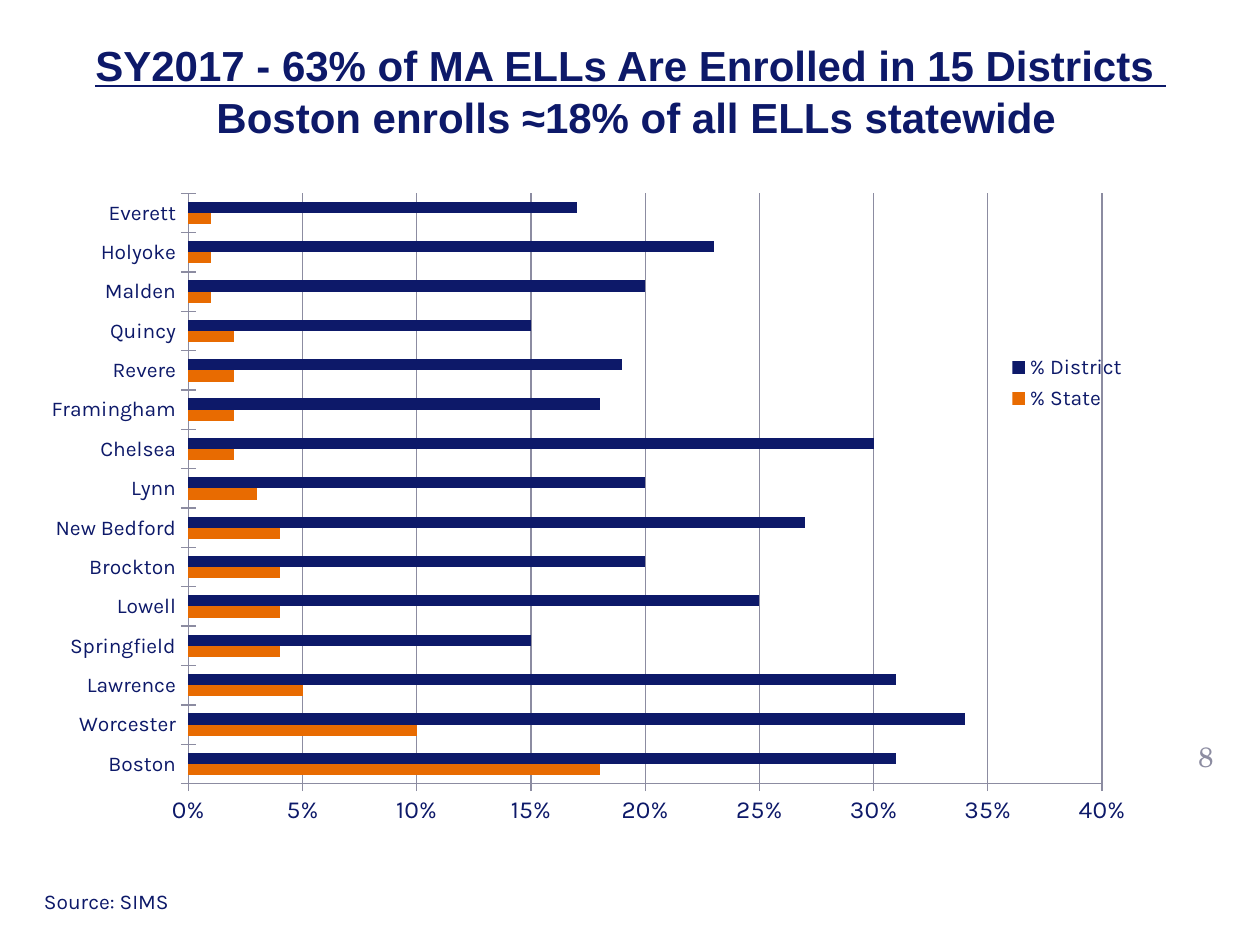
from dataclasses import dataclass

from lxml import etree
from pptx import Presentation
from pptx.chart.data import CategoryChartData
from pptx.dml.color import RGBColor
from pptx.enum.chart import XL_CHART_TYPE, XL_LEGEND_POSITION, XL_TICK_MARK
from pptx.enum.text import MSO_ANCHOR, PP_ALIGN
from pptx.oxml.ns import qn
from pptx.util import Inches, Pt

BAR = XL_CHART_TYPE.BAR_CLUSTERED
RIGHT = XL_LEGEND_POSITION.RIGHT
CROSS, NO_TICK = XL_TICK_MARK.CROSS, XL_TICK_MARK.NONE
TOP, MIDDLE = MSO_ANCHOR.TOP, MSO_ANCHOR.MIDDLE
LEFT, CENTER = PP_ALIGN.LEFT, PP_ALIGN.CENTER


@dataclass(frozen=True)
class Theme:
    navy: RGBColor = RGBColor(0x0D, 0x19, 0x69)
    orange: RGBColor = RGBColor(0xE8, 0x6B, 0x01)
    gray: RGBColor = RGBColor(0x8C, 0x8C, 0xA1)
    heading: str = "Arial"
    body: str = "Karla"
    number: str = "TeX Gyre Schola"
    title_size: Pt = Pt(24)
    number_size: Pt = Pt(16)
    axis_size: Pt = Pt(14)
    small_size: Pt = Pt(12)


THEME = Theme()

# District, % of state ELLs, % of district enrolment
DISTRICTS = [
    ("Boston", 0.18, 0.31),
    ("Worcester", 0.10, 0.34),
    ("Lawrence", 0.05, 0.31),
    ("Springfield", 0.04, 0.15),
    ("Lowell", 0.04, 0.25),
    ("Brockton", 0.04, 0.20),
    ("New Bedford", 0.04, 0.27),
    ("Lynn", 0.03, 0.20),
    ("Chelsea", 0.02, 0.30),
    ("Framingham", 0.02, 0.18),
    ("Revere", 0.02, 0.19),
    ("Quincy", 0.02, 0.15),
    ("Malden", 0.01, 0.20),
    ("Holyoke", 0.01, 0.23),
    ("Everett", 0.01, 0.17),
]


def style_font(font, name, size, color):
    font.name, font.size = name, size
    font.color.rgb = color


def add_text_frame(slide, box, anchor):
    tf = slide.shapes.add_textbox(*box).text_frame
    tf.word_wrap = True
    tf.vertical_anchor = anchor
    return tf


def add_label(slide, box, text, name, size, color, align=LEFT, anchor=TOP):
    p = add_text_frame(slide, box, anchor).paragraphs[0]
    p.alignment = align
    r = p.add_run()
    r.text = text
    style_font(r.font, name, size, color)


def add_title(slide, box):
    p = add_text_frame(slide, box, MIDDLE).paragraphs[0]
    p.alignment = CENTER
    p.line_spacing = 1.05
    lines = [
        ("SY2017 - 63% of MA ELLs Are Enrolled in 15 Districts ", True),
        (" Boston enrolls ≈18% of all ELLs statewide", False),
    ]
    for i, (text, underline) in enumerate(lines):
        if i:
            p.add_line_break()
        r = p.add_run()
        r.text = text
        style_font(r.font, THEME.heading, THEME.title_size, THEME.navy)
        r.font.bold = True
        r.font.underline = underline


def add_layout(parent, after, x, y, w, h, inner=False):
    """Place a chart part by fractions of the chart area."""
    for old in parent.findall(qn("c:layout")):
        parent.remove(old)
    layout = etree.Element(qn("c:layout"))
    manual = etree.SubElement(layout, qn("c:manualLayout"))
    values = [("layoutTarget", "inner")] if inner else []
    values += [("xMode", "edge"), ("yMode", "edge"),
               ("x", x), ("y", y), ("w", w), ("h", h)]
    for tag, value in values:
        etree.SubElement(manual, qn(f"c:{tag}")).set("val", str(value))
    if after is None:
        parent.insert(0, layout)
    else:
        after.addnext(layout)


def style_line(line):
    line.color.rgb = THEME.gray
    line.width = Pt(0.75)


def add_district_chart(slide, box):
    data = CategoryChartData(number_format="0%")
    names, state, district = zip(*DISTRICTS)
    data.categories = names
    data.add_series("% State", state)
    data.add_series("% District", district)
    chart = slide.shapes.add_chart(BAR, *box, data).chart
    chart.has_title = False
    style_font(chart.font, THEME.body, Pt(18), THEME.navy)

    # Bars
    plot = chart.plots[0]
    plot.vary_by_categories = False
    plot.gap_width, plot.overlap = 150, 0
    for series, color in zip(plot.series, (THEME.orange, THEME.navy)):
        series.format.fill.solid()
        series.format.fill.fore_color.rgb = color

    # Axes
    axes = ((chart.category_axis, THEME.small_size),
            (chart.value_axis, THEME.axis_size))
    for axis, size in axes:
        axis.major_tick_mark, axis.minor_tick_mark = CROSS, NO_TICK
        style_font(axis.tick_labels.font, THEME.body, size, THEME.navy)
        style_line(axis.format.line)
    value_axis = chart.value_axis
    value_axis.minimum_scale, value_axis.maximum_scale = 0, 0.4
    value_axis.major_unit = 0.05
    value_axis.tick_labels.number_format = "0%"
    value_axis.tick_labels.number_format_is_linked = False
    value_axis.has_major_gridlines = True
    style_line(value_axis.major_gridlines.format.line)

    # Legend over the plot
    chart.has_legend = True
    legend = chart.legend
    legend.position, legend.include_in_layout = RIGHT, False
    style_font(legend.font, THEME.body, THEME.small_size, THEME.navy)
    root = chart.element
    legend_pos = root.find(".//" + qn("c:legendPos"))
    add_layout(legend_pos.getparent(), legend_pos, 0.82, 0.24, 0.12, 0.09)
    add_layout(root.find(".//" + qn("c:plotArea")), None,
               0.126, 0.034, 0.784, 0.781, inner=True)


def main():
    prs = Presentation()
    prs.slide_width, prs.slide_height = Inches(10), Inches(7.5)
    slide = prs.slides.add_slide(prs.slide_layouts[6])

    # Page number
    add_label(slide, (Inches(9.28), Inches(5.75), Inches(0.58), Inches(0.5)),
              "8", THEME.number, THEME.number_size, THEME.gray, CENTER, MIDDLE)
    # Title
    add_title(slide, (Inches(0.17), Inches(0.17), Inches(9.67), Inches(1.08)))
    # Chart
    add_district_chart(slide, (Inches(0.33), Inches(1.33), Inches(9.25), Inches(6)))
    # Source
    add_label(slide, (Inches(0.25), Inches(7), Inches(1.75), Inches(0.3)),
              "Source: SIMS", THEME.body, THEME.small_size, THEME.navy)

    prs.save("out.pptx")


if __name__ == "__main__":
    main()
